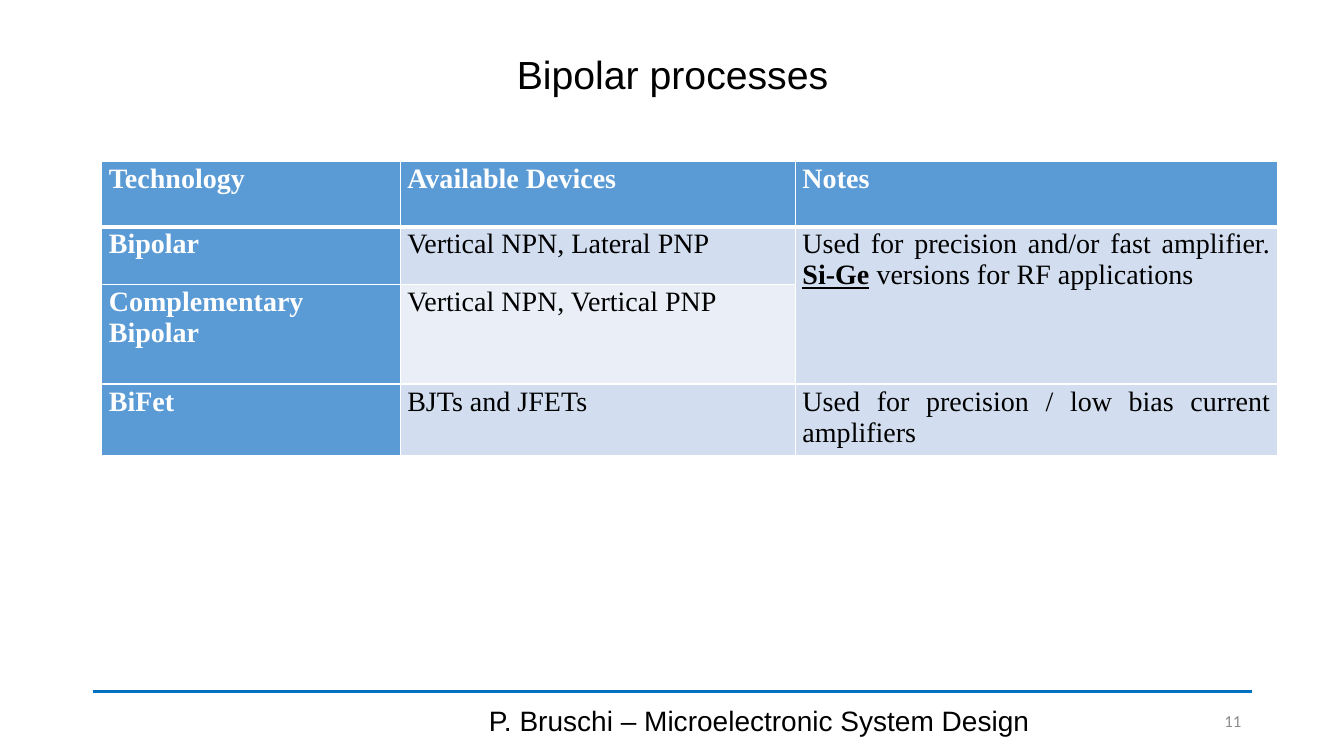
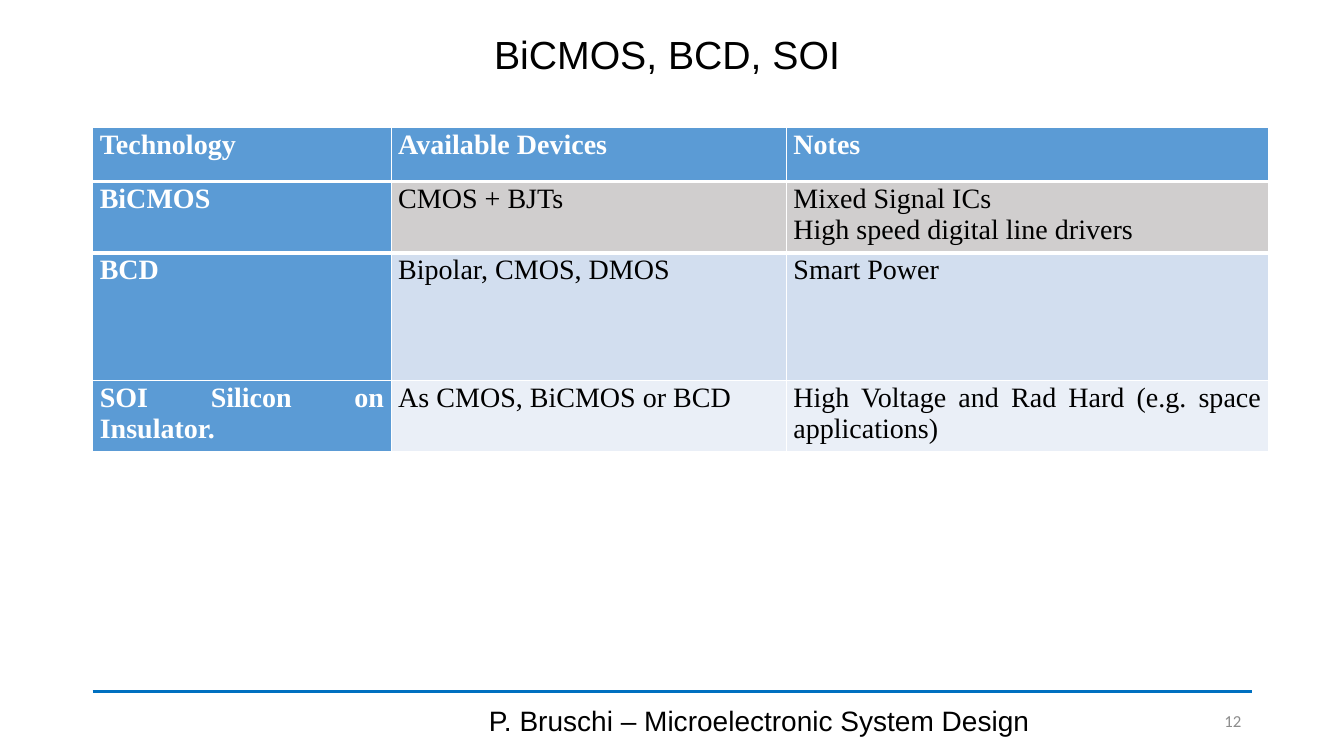
from dataclasses import dataclass

from lxml import etree
from pptx import Presentation
from pptx.dml.color import RGBColor
from pptx.enum import shapes, text
from pptx.oxml import ns
from pptx.util import Inches, Pt


@dataclass(frozen=True)
class Theme:
    sans: str = "Arial"
    serif: str = "Times New Roman"
    small: str = "Calibri"
    title: int = 28
    body: int = 20
    number: int = 12
    black: str = "000000"
    white: str = "FFFFFF"
    rule: str = "0070C0"
    muted: str = "8C8C8C"
    head: str = "5B9BD5"
    band: str = "D2DEEF"
    pale: str = "EAEFF7"
    gray: str = "D0CECE"


THEME = Theme()
ALIGN = text.PP_ALIGN
COLS = (2.96, 3.92, 4.78)
HEADS = ("Technology", "Available Devices", "Notes")


def style(run, font, size, color, bold=False):
    run.font.name = font
    run.font.size = Pt(size)
    run.font.color.rgb = RGBColor.from_string(color)
    run.font.bold = bold


def label(slide, box, words, font, size, color, align, space=None):
    frame = slide.shapes.add_textbox(*map(Inches, box)).text_frame
    frame.word_wrap = True
    frame.vertical_anchor = text.MSO_ANCHOR.MIDDLE
    frame.text = words
    para = frame.paragraphs[0]
    para.alignment = align
    para.line_spacing = space
    style(para.runs[0], font, size, color)


def rule(slide, left, right, top):
    line = slide.shapes.add_connector(
        shapes.MSO_CONNECTOR.STRAIGHT, *map(Inches, (left, top, right, top)))
    line.line.color.rgb = RGBColor.from_string(THEME.rule)
    line.line.width = Pt(2.75)
    etree.SubElement(line._element.spPr, ns.qn("a:effectLst"))


def border(cell, base):
    props = cell._tc.get_or_add_tcPr()
    for side in "LRTB":
        width = base if side == "B" else 1
        edge = etree.SubElement(props, ns.qn(f"a:ln{side}"), w=str(Pt(width)))
        fill = etree.SubElement(edge, ns.qn("a:solidFill"))
        etree.SubElement(fill, ns.qn("a:srgbClr"), val=THEME.white)


def write(cell, words, color, bold):
    cell.margin_left = cell.margin_right = Inches(0.07)
    cell.margin_top = cell.margin_bottom = Inches(0.02)
    frame = cell.text_frame
    frame.text = words
    for para in frame.paragraphs:
        para.alignment = ALIGN.JUSTIFY
        parts = para.text.split("*")
        para.text = ""
        for spot, part in enumerate(parts):
            strong = spot % 2 == 1
            run = para.add_run()
            run.text = part
            style(run, THEME.serif, THEME.body, color, bold or strong)
            run.font.underline = strong


def grid(slide, left, top, rows, thick=True):
    box = (left, top, sum(COLS), sum(row[0] for row in rows))
    table = slide.shapes.add_table(
        len(rows), len(COLS), *map(Inches, box)).table
    table.first_row = table.horz_banding = False
    for col, width in zip(table.columns, COLS):
        col.width = Inches(width)
    for y, (height, fill, words) in enumerate(rows):
        table.rows[y].height = Inches(height)
        for x, item in enumerate(words):
            cell = table.cell(y, x)
            head = x == 0 or fill == THEME.head
            border(cell, 3 if thick and y == 0 else 1)
            cell.fill.solid()
            cell.fill.fore_color.rgb = RGBColor.from_string(
                THEME.head if head else fill)
            write(cell, item, THEME.white if head else THEME.black, head)
    return table


def page(deck, title, top, number):
    slide = deck.slides.add_slide(deck.slide_layouts[6])
    rule(slide, 0.92, 12.42, 6.86)
    label(slide, (0.92, top, 11.5, 0.72), title, THEME.sans, THEME.title,
          THEME.black, ALIGN.CENTER, 0.9)
    label(slide, (4.42, 6.95, 6.22, 0.4),
          "P. Bruschi – Microelectronic System Design", THEME.sans,
          THEME.body, THEME.black, ALIGN.CENTER)
    label(slide, (11.45, 6.95, 0.96, 0.4), str(number), THEME.small,
          THEME.number, THEME.muted, ALIGN.RIGHT)
    return slide


def bipolar(deck):
    slide = page(deck, "Bipolar processes", 0.4, 11)
    table = grid(slide, 1.01, 1.6, (
        (0.65, THEME.head, HEADS),
        (0.57, THEME.band, (
            "Bipolar", "Vertical NPN, Lateral PNP",
            "Used for precision and/or fast amplifier. "
            "*Si-Ge* versions for RF applications")),
        (0.99, THEME.pale, (
            "Complementary Bipolar", "Vertical NPN, Vertical PNP", "")),
        (0.65, THEME.band, (
            "BiFet", "BJTs and JFETs",
            "Used for precision / low bias current amplifiers")),
    ))
    table.cell(1, 2).merge(table.cell(2, 2))


def mixed(deck):
    slide = page(deck, "BiCMOS, BCD, SOI ", 0.2, 12)
    grid(slide, 0.92, 1.8, (
        (0.65, THEME.gray, (
            "BiCMOS", "CMOS + BJTs",
            "Mixed Signal ICs\nHigh speed digital line drivers")),
        (1.27, THEME.band, ("BCD", "Bipolar, CMOS, DMOS", "Smart Power")),
        (0.65, THEME.pale, (
            "SOI Silicon on Insulator.", "As CMOS, BiCMOS or BCD",
            "High Voltage and Rad Hard (e.g. space applications)")),
    ))
    grid(slide, 0.92, 1.26, ((0.54, THEME.head, HEADS),))


def main():
    deck = Presentation()
    deck.slide_width = Inches(13.33)
    deck.slide_height = Inches(7.5)
    bipolar(deck)
    mixed(deck)
    deck.save("out.pptx")


if __name__ == "__main__":
    main()
